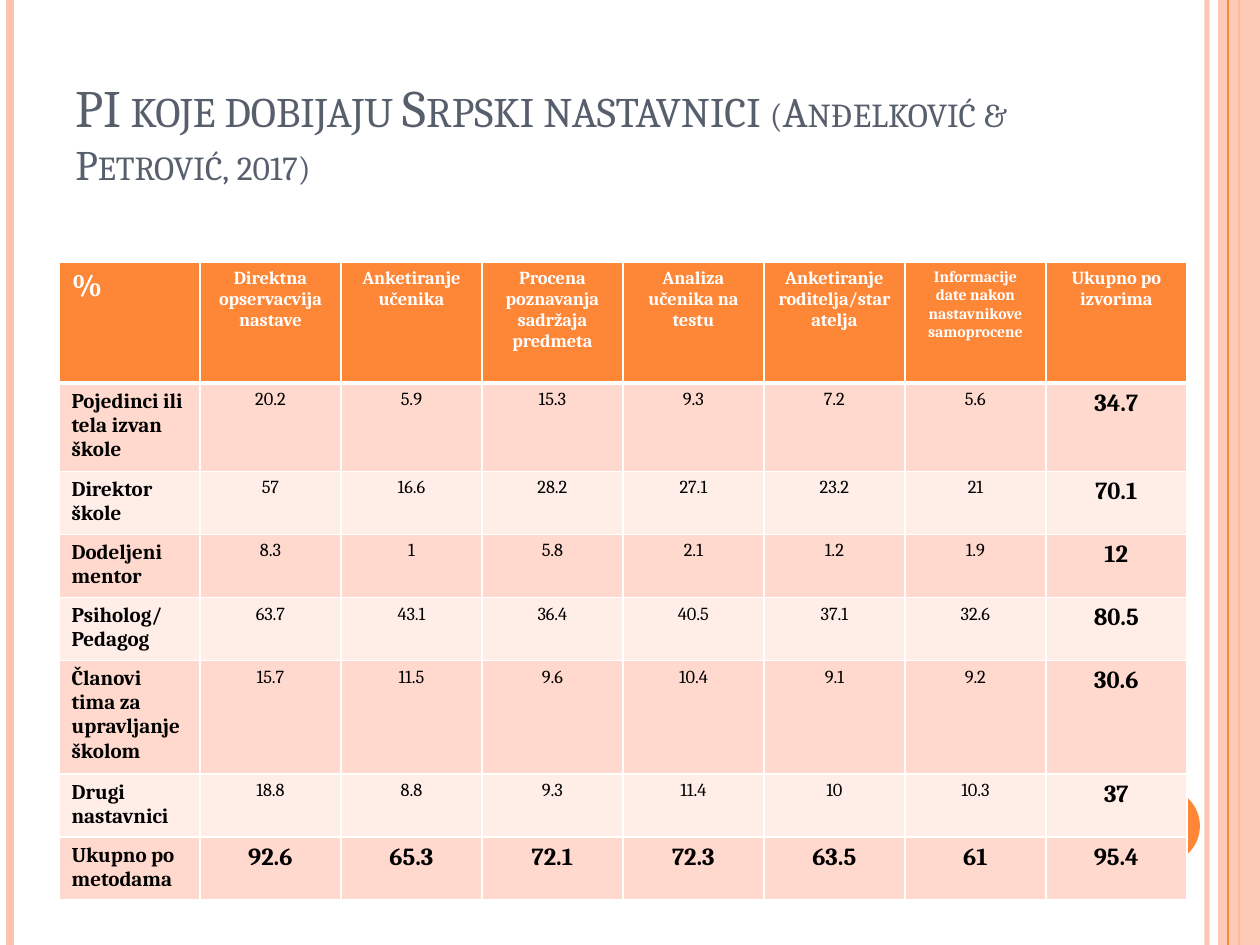
"""Build a slide with a table of feedback sources and methods for Serbian teachers."""
from dataclasses import dataclass
from typing import Optional

import lxml.etree
import pptx
import pptx.dml.color
import pptx.enum.shapes
import pptx.enum.text
import pptx.oxml.ns
import pptx.util

RGBColor = pptx.dml.color.RGBColor
Align = pptx.enum.text.PP_ALIGN
Shape = pptx.enum.shapes.MSO_SHAPE

PX_PER_INCH = 126
PAGE_WIDTH, PAGE_HEIGHT = 1260, 945
FONT = "Cambria"
ORANGE = RGBColor(0xFE, 0x86, 0x37)
PEACH = RGBColor(0xFE, 0xC3, 0xAE)
SLATE = RGBColor(0x57, 0x5F, 0x6D)
WHITE = RGBColor(0xFF, 0xFF, 0xFF)
BLACK = RGBColor(0x00, 0x00, 0x00)
BANDS = (RGBColor(0xFF, 0xD9, 0xCE), RGBColor(0xFF, 0xED, 0xE8))


@dataclass(frozen=True)
class Stripe:
    x: int
    weight: float
    color: RGBColor
    opacity: Optional[int] = None


@dataclass(frozen=True)
class Block:
    kind: Shape
    left: int
    top: int
    width: int
    height: int
    color: RGBColor
    opacity: Optional[int] = None


@dataclass(frozen=True)
class SourceRow:
    label: str
    values: str
    height: int


LEFT_STRIPES = (
    Stripe(1207, 3, PEACH, 93),
    Stripe(10, 4.5, PEACH),
    Stripe(1239, 1.5, ORANGE),
)
SIDE_BAND = Block(Shape.RECTANGLE, 1218, 0, 42, PAGE_HEIGHT, PEACH, 87)
BAND_STRIPE = Stripe(1228, 0.75, ORANGE)
PAGE_DISC = Block(Shape.OVAL, 1124, 788, 76, 76, ORANGE)

TABLE_LEFT, TABLE_TOP = 59, 262
COLUMN_WIDTH, HEADER_HEIGHT = 141, 121
HEADERS = (
    "%",
    "Direktna opservacvija nastave",
    "Anketiranje učenika",
    "Procena poznavanja sadržaja predmeta",
    "Analiza učenika na testu",
    "Anketiranje roditelja/staratelja",
    "Informacije date nakon nastavnikove samoprocene",
    "Ukupno po izvorima",
)
HEADER_SIZES = (18, 10.5, 10.5, 10.5, 10.5, 10.5, 9, 10.5)
ROWS = (
    SourceRow("Pojedinci ili tela izvan škole", "20.2 5.9 15.3 9.3 7.2 5.6 34.7", 87),
    SourceRow("Direktor škole", "57 16.6 28.2 27.1 23.2 21 70.1", 63),
    SourceRow("Dodeljeni mentor", "8.3 1 5.8 2.1 1.2 1.9 12", 63),
    SourceRow("Psiholog/\nPedagog", "63.7 43.1 36.4 40.5 37.1 32.6 80.5", 63),
    SourceRow("Članovi tima za upravljanje školom", "15.7 11.5 9.6 10.4 9.1 9.2 30.6", 111),
    SourceRow("Drugi nastavnici", "18.8 8.8 9.3 11.4 10 10.3 37", 63),
    SourceRow("Ukupno po metodama", "92.6 65.3 72.1 72.3 63.5 61 95.4", 63),
)


def px(length: int) -> int:
    return round(length * pptx.util.Inches(1) / PX_PER_INCH)


def add_child(parent, tag: str, **attributes: str):
    return lxml.etree.SubElement(parent, pptx.oxml.ns.qn(tag), **attributes)


def set_opacity(element, opacity: Optional[int]) -> None:
    if opacity is not None:
        color = next(element.iter(pptx.oxml.ns.qn("a:srgbClr")))
        add_child(color, "a:alpha", val=str(opacity * 1000))


def write(para, text: str, *, size: float, color: RGBColor, bold: bool = False,
          align: Align = Align.LEFT, small_caps: bool = False) -> None:
    para.alignment = align
    span = para.add_run()
    span.text = text
    span.font.name = FONT
    span.font.size = pptx.util.Pt(size)
    span.font.bold = bold
    span.font.color.rgb = color
    if small_caps:
        span.font._element.set("cap", "small")


def add_stripe(page, stripe: Stripe) -> None:
    line = page.shapes.add_connector(
        pptx.enum.shapes.MSO_CONNECTOR.STRAIGHT,
        px(stripe.x), 0, px(stripe.x), px(PAGE_HEIGHT))
    line.line.color.rgb = stripe.color
    line.line.width = pptx.util.Pt(stripe.weight)
    properties = line._element.spPr
    set_opacity(properties, stripe.opacity)
    add_child(properties, "a:effectLst")


def add_block(page, block: Block) -> None:
    shape = page.shapes.add_shape(
        block.kind, px(block.left), px(block.top), px(block.width), px(block.height))
    shape.shadow.inherit = False
    shape.fill.solid()
    shape.fill.fore_color.rgb = block.color
    shape.line.fill.background()
    set_opacity(shape._element.spPr, block.opacity)


def add_title(page) -> None:
    box = page.shapes.add_textbox(px(63), px(38), px(1029), px(157))
    frame = box.text_frame
    frame.word_wrap = True
    frame.vertical_anchor = pptx.enum.text.MSO_ANCHOR.BOTTOM
    para = frame.paragraphs[0]
    write(para, "PI koje dobijaju Srpski nastavnici ", size=30, color=SLATE, small_caps=True)
    write(para, "(Anđelković & Petrović, 2017)", size=24, color=SLATE, small_caps=True)


def style_cell(cell, color: RGBColor, top: int = 1, bottom: int = 1) -> None:
    properties = cell._tc.get_or_add_tcPr()
    for side, weight in (("L", 1), ("R", 1), ("T", top), ("B", bottom)):
        border = add_child(properties, f"a:ln{side}", w=str(pptx.util.Pt(weight)))
        add_child(add_child(border, "a:solidFill"), "a:srgbClr", val=str(WHITE))
    cell.fill.solid()
    cell.fill.fore_color.rgb = color


def add_source_table(page) -> None:
    heights = [HEADER_HEIGHT] + [row.height for row in ROWS]
    table = page.shapes.add_table(
        len(heights), len(HEADERS), px(TABLE_LEFT), px(TABLE_TOP),
        px(COLUMN_WIDTH * len(HEADERS)), px(sum(heights))).table
    table.horz_banding = False
    for column in table.columns:
        column.width = px(COLUMN_WIDTH)
    for line, height in zip(table.rows, heights):
        line.height = px(height)

    for column, (text, size) in enumerate(zip(HEADERS, HEADER_SIZES)):
        cell = table.cell(0, column)
        style_cell(cell, ORANGE, bottom=3)
        write(cell.text_frame.paragraphs[0], text, size=size, color=WHITE, bold=True,
              align=Align.CENTER if column else Align.LEFT)

    for index, row in enumerate(ROWS, start=1):
        for column, text in enumerate([row.label, *row.values.split()]):
            cell = table.cell(index, column)
            style_cell(cell, BANDS[(index - 1) % 2], top=3 if index == 1 else 1)
            is_total = index == len(ROWS) or column == len(HEADERS) - 1
            size = 12 if column == 0 else 14 if is_total else 10.5
            frame = cell.text_frame
            for number, part in enumerate(text.split("\n")):
                para = frame.add_paragraph() if number else frame.paragraphs[0]
                write(para, part, size=size, color=BLACK, bold=column == 0 or is_total,
                      align=Align.CENTER if column else Align.LEFT)


def main() -> None:
    deck = pptx.Presentation()
    deck.slide_width, deck.slide_height = px(PAGE_WIDTH), px(PAGE_HEIGHT)
    page = deck.slides.add_slide(deck.slide_layouts[6])
    for stripe in LEFT_STRIPES:
        add_stripe(page, stripe)
    add_block(page, SIDE_BAND)
    add_stripe(page, BAND_STRIPE)
    add_block(page, PAGE_DISC)
    add_title(page)
    add_source_table(page)
    deck.save("out.pptx")


if __name__ == "__main__":
    main()
